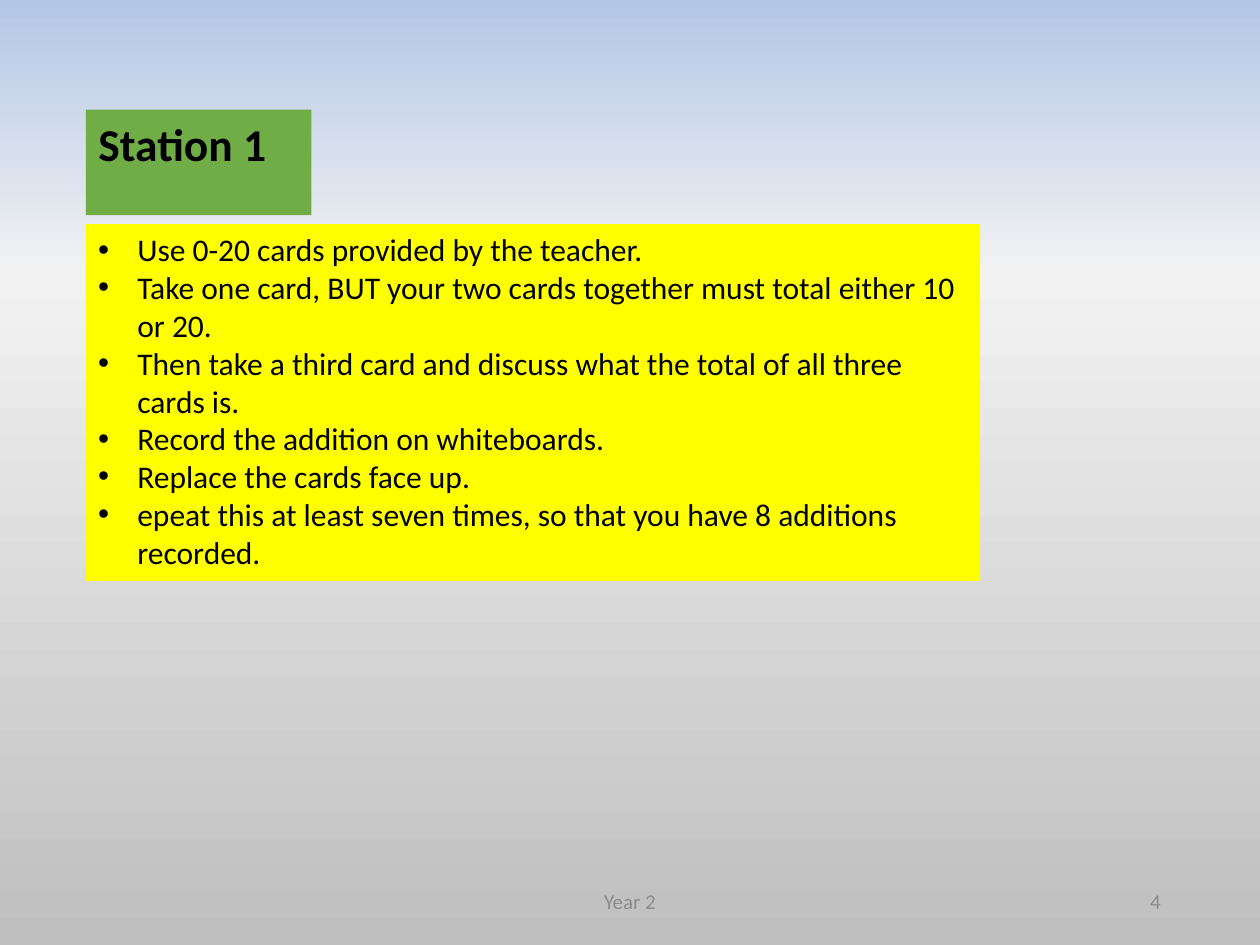
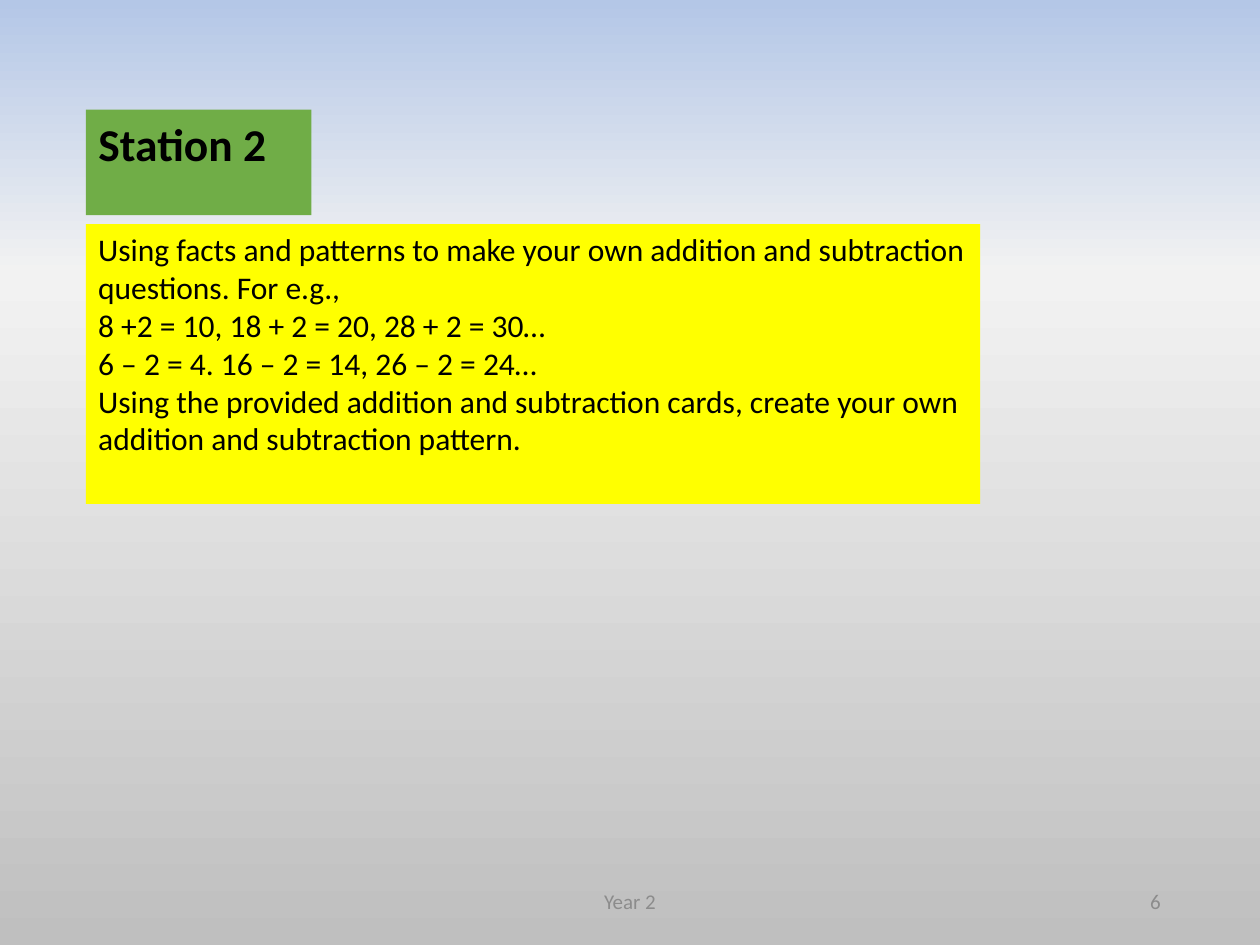
import copy

import pptx
import pptx.dml.color
import pptx.enum.shapes
import pptx.enum.text
import pptx.oxml
import pptx.oxml.ns
import pptx.util

Cm, Pt = pptx.util.Cm, pptx.util.Pt
qn = pptx.oxml.ns.qn
ALIGN = pptx.enum.text.PP_ALIGN
ANCHOR = pptx.enum.text.MSO_ANCHOR

STATIONS = [
    {"title": "Station 1", "number": "4", "height": 7.19, "bullets": True, "lines": [
        "Use 0-20 cards provided by the teacher.",
        "Take one card, BUT your two cards together must total either 10 or 20.",
        "Then take a third card and discuss what the total of all three cards is.",
        "Record the addition on whiteboards.",
        "Replace the cards face up.",
        "epeat this at least seven times, so that you have 8 additions recorded.",
    ]},
    {"title": "Station 2", "number": "6", "height": 5.64, "bullets": False, "lines": [
        "Using facts and patterns to make your own addition and subtraction questions. For e.g.,",
        "8 +2 = 10, 18 + 2 = 20, 28 + 2 = 30…",
        "6 – 2 = 4. 16 – 2 = 14, 26 – 2 = 24…",
        "Using the provided addition and subtraction cards, create your own addition and subtraction pattern.",
    ]},
]
FOOTER = "Year 2"
FONT = "Calibri"
COLORS = {"title": "70AD47", "task": "FFFF00", "text": "000000", "footer": "8C8C8C"}
GRADIENT = [(0, "B4C7E7"), (0.29, "F2F2F2"), (1, "BFBFBF")]

LEFT = 1.73
TITLE_BOX = (LEFT, 2.21, 4.55, 2.13)
TASK_TOP, TASK_WIDTH = 4.52, 18.03
FOOTER_BOX = (8.41, 17.65, 8.58, 1.02)
NUMBER_BOX = (17.93, 17.65, 5.72, 1.02)
BULLET_INDENT = 0.79


def rgb(value):
    return pptx.dml.color.RGBColor.from_string(value)


def place(sp, box):
    sp.left, sp.top, sp.width, sp.height = map(Cm, box)


def paint(sp, color):
    sp.fill.solid()
    sp.fill.fore_color.rgb = rgb(color)
    sp.line.fill.background()


def add_bullet(p):
    pPr = p._p.get_or_add_pPr()
    pPr.set("marL", str(Cm(BULLET_INDENT)))
    pPr.set("indent", str(-Cm(BULLET_INDENT)))
    for tag, name, value in (("a:buFont", "typeface", "Arial"), ("a:buChar", "char", "•")):
        pPr.append(pptx.oxml.parse_xml(
            f'<{tag} {pptx.oxml.ns.nsdecls("a")} {name}="{value}"/>'))


def write(sp, lines, size, color=COLORS["text"], bold=False, align=ALIGN.LEFT,
          anchor=ANCHOR.TOP, bullets=False):
    tf = sp.text_frame
    tf.word_wrap = True
    tf.auto_size = pptx.enum.text.MSO_AUTO_SIZE.NONE
    tf.vertical_anchor = anchor
    for i, line in enumerate(lines):
        p = tf.add_paragraph() if i else tf.paragraphs[0]
        p.alignment = align
        if bullets:
            add_bullet(p)
        r = p.add_run()
        r.text = line
        r.font.name, r.font.size, r.font.bold = FONT, Pt(size), bold
        r.font.color.rgb = rgb(color)


def set_background(master):
    fill = master.background.fill
    fill.gradient()
    fill.gradient_angle = 270
    gs_list = next(master.element.iter(qn("a:gsLst")))
    gs_list.append(copy.deepcopy(gs_list[-1]))
    for stop, (position, color) in zip(fill.gradient_stops, GRADIENT):
        stop.position = position
        stop.color.rgb = rgb(color)


def add_station(prs, station):
    s = prs.slides.add_slide(prs.slide_layouts[5])
    title = s.shapes.title
    place(title, TITLE_BOX)
    paint(title, COLORS["title"])
    write(title, [station["title"]], 26, bold=True)

    task = s.shapes.add_shape(
        pptx.enum.shapes.MSO_SHAPE.RECTANGLE,
        *map(Cm, (LEFT, TASK_TOP, TASK_WIDTH, station["height"])))
    task.shadow.inherit = False
    paint(task, COLORS["task"])
    write(task, station["lines"], 18, bullets=station["bullets"])

    for text, box, align in ((FOOTER, FOOTER_BOX, ALIGN.CENTER),
                             (station["number"], NUMBER_BOX, ALIGN.RIGHT)):
        sp = s.shapes.add_textbox(*map(Cm, box))
        write(sp, [text], 12, COLORS["footer"], align=align, anchor=ANCHOR.MIDDLE)


def main():
    prs = pptx.Presentation()
    prs.slide_width, prs.slide_height = Cm(25.4), Cm(19.05)
    set_background(prs.slide_master)
    for station in STATIONS:
        add_station(prs, station)
    prs.save("out.pptx")


if __name__ == "__main__":
    main()
